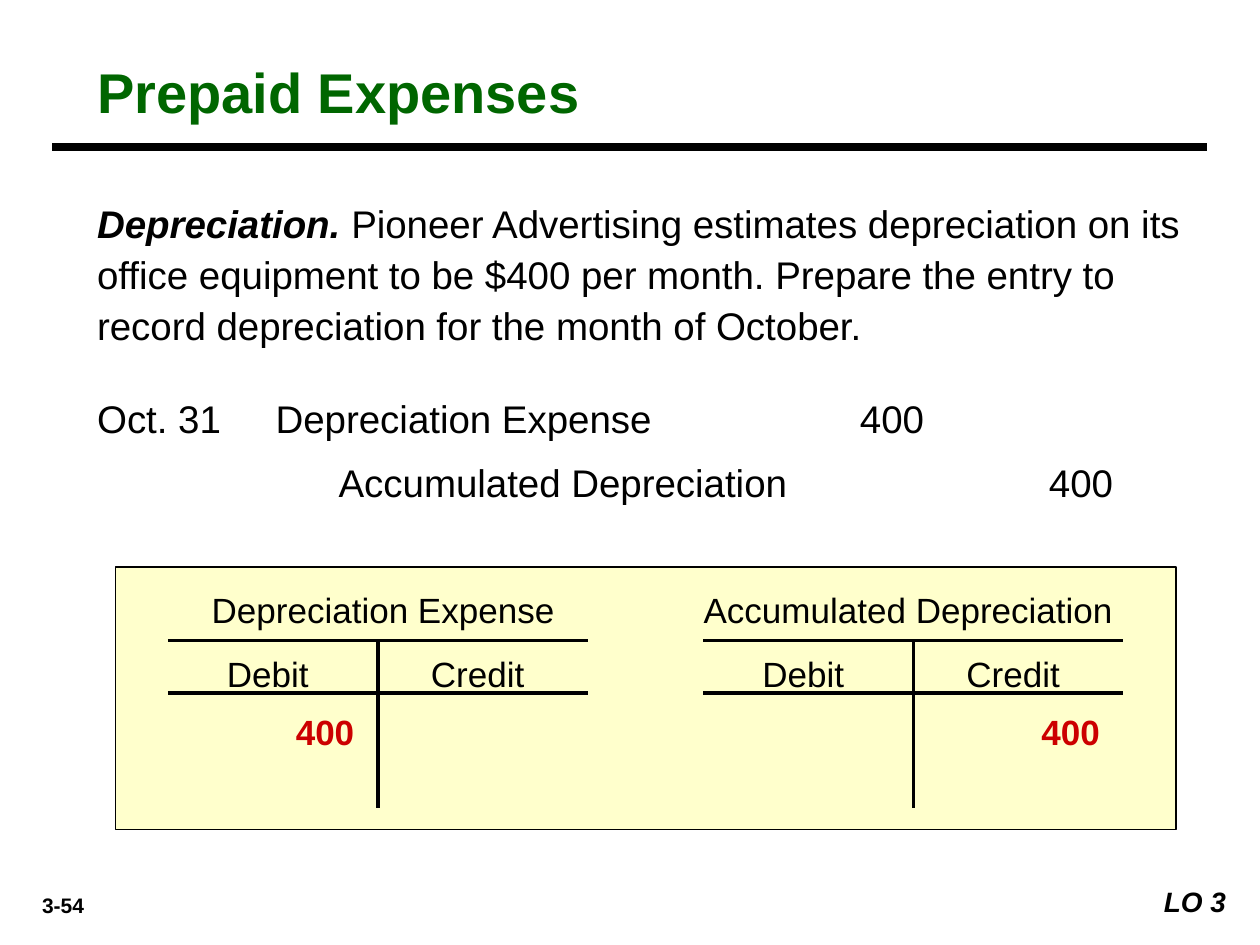
from dataclasses import dataclass
from typing import Optional

from lxml.etree import SubElement
from pptx import Presentation
from pptx.dml.color import RGBColor
from pptx.enum.shapes import MSO_CONNECTOR, MSO_SHAPE
from pptx.enum.text import MSO_ANCHOR, PP_ALIGN
from pptx.oxml.ns import qn
from pptx.util import Emu, Pt

PX = 9525
INK, GREEN, RED, CREAM, WHITE = "000000", "006600", "CC0000", "FFFFCC", "FFFFFF"
LEFT, MID, RIGHT = PP_ALIGN.LEFT, PP_ALIGN.CENTER, PP_ALIGN.RIGHT
PAD, FLAT, SUM = (10, 5, 10, 5), (0, 0, 0, 0), (29, 5, 0, 5)


@dataclass
class Label:
    """Text with its place in px and its look."""
    text: str
    box: tuple[int, int, int, int]
    size: int
    align: PP_ALIGN = LEFT
    pad: tuple[int, int, int, int] = PAD
    color: str = INK
    bold: bool = False
    slant: bool = False
    space: float = 1.0
    fill: Optional[str] = None


@dataclass
class Ledger:
    """One T account: its left edge, heading and single amount."""
    left: int
    name: str
    head: tuple[int, int]
    shift: int


def px(count: int) -> Emu:
    """Turn px into EMU."""
    return Emu(count * PX)


def rgb(code: str) -> RGBColor:
    """Turn a hex string into a colour."""
    return RGBColor.from_string(code)


def place(shape, box) -> None:
    """Move and size a shape."""
    shape.left, shape.top, shape.width, shape.height = map(px, box)


def write(shape, label: Label):
    """Fill a shape with a label's text and return the paragraph."""
    frame = shape.text_frame
    frame.word_wrap = True
    (frame.margin_left, frame.margin_top,
     frame.margin_right, frame.margin_bottom) = map(px, label.pad)
    para = frame.paragraphs[0]
    para.text = label.text
    para.alignment, para.line_spacing = label.align, label.space
    font = para.font
    font.name, font.size = "Arial", Pt(label.size)
    font.bold, font.italic = label.bold, label.slant
    font.color.rgb = rgb(label.color)
    return para


def add(slide, label: Label):
    """Add a text box for a label and return its paragraph."""
    shape = slide.shapes.add_textbox(*map(px, label.box))
    if label.fill:
        shape.fill.solid()
        shape.fill.fore_color.rgb = rgb(label.fill)
    return write(shape, label)


def rule(slide, start: tuple[int, int], end: tuple[int, int],
         width: float = 2.25) -> None:
    """Draw a straight black line."""
    line = slide.shapes.add_connector(
        MSO_CONNECTOR.STRAIGHT, *map(px, start + end))
    line.line.color.rgb = rgb(INK)
    line.line.width = Pt(width)
    SubElement(line._element.spPr, qn("a:effectLst"))


def draw(slide, book: Ledger) -> None:
    """Draw one T account."""
    left, right, stem = book.left, book.left + 320, book.left + 160
    start, width = book.head
    add(slide, Label(book.name, (start, 448, width, 32), 20, MID, FLAT))
    add(slide, Label("Debit", (left, 492, 152, 36), 20, MID, FLAT, space=1.15))
    add(slide, Label("Credit", (left + 168, 492, 136, 36), 20, MID, FLAT,
                     space=1.15))
    add(slide, Label("400", (left + book.shift, 536, 144, 41), 20, RIGHT,
                     color=RED, bold=True, fill=CREAM))
    rule(slide, (stem, 488), (stem, 616))
    for top in (488, 528):
        rule(slide, (left, top), (right, top))


def main() -> None:
    """Build and save the slide."""
    deck = Presentation()
    deck.slide_width, deck.slide_height = px(960), px(720)
    slide = deck.slides.add_slide(deck.slide_layouts[5])

    title = slide.shapes.title
    heading = Label("Prepaid Expenses", (64, 40, 864, 59), 32,
                    color=GREEN, bold=True)
    place(title, heading.box)
    write(title, heading)
    title.text_frame.vertical_anchor = MSO_ANCHOR.MIDDLE
    rule(slide, (40, 112), (920, 112), 4.5)

    panel = slide.shapes.add_shape(
        MSO_SHAPE.RECTANGLE, *map(px, (88, 432, 808, 200)))
    panel.shadow.inherit = False
    panel.fill.solid()
    panel.fill.fore_color.rgb = rgb(CREAM)
    panel.line.color.rgb = rgb(INK)
    panel.line.width = Pt(1)

    task = add(slide, Label("Depreciation.", (64, 144, 848, 127), 22,
                            space=1.1))
    lead = task.runs[0].font
    lead.bold = lead.italic = True
    task.add_run().text = (
        " Pioneer Advertising estimates depreciation on its office equipment "
        "to be $400 per month. Prepare the entry to record depreciation for "
        "the month of October.")

    for label in (
        Label("Oct. 31", (64, 296, 128, 45), 22),
        Label("Depreciation Expense", (200, 296, 368, 45), 22),
        Label("400", (576, 296, 128, 45), 22, RIGHT, SUM),
        Label("Accumulated Depreciation", (200, 345, 480, 45), 22,
              pad=(58, 5, 10, 5)),
        Label("400", (720, 345, 128, 45), 22, RIGHT, SUM),
        Label("3-54", (8, 675, 80, 29), 12, MID, bold=True),
        Label("LO 3", (864, 669, 80, 35), 16, RIGHT, bold=True, slant=True,
              fill=WHITE),
    ):
        add(slide, label)

    for book in (
        Ledger(128, "Depreciation Expense", (136, 312), 8),
        Ledger(536, "Accumulated Depreciation", (528, 328), 168),
    ):
        draw(slide, book)

    deck.save("out.pptx")


if __name__ == "__main__":
    main()
